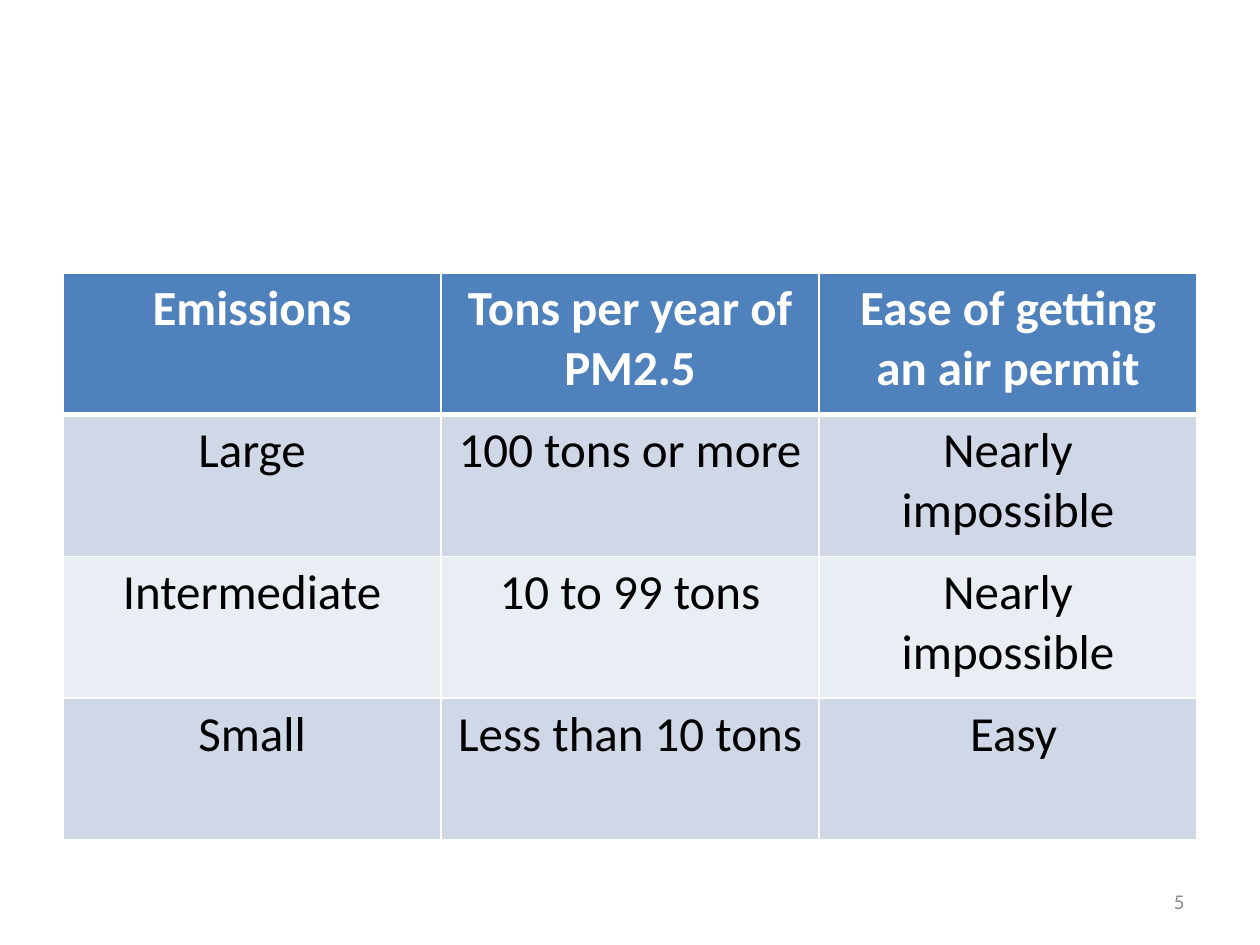
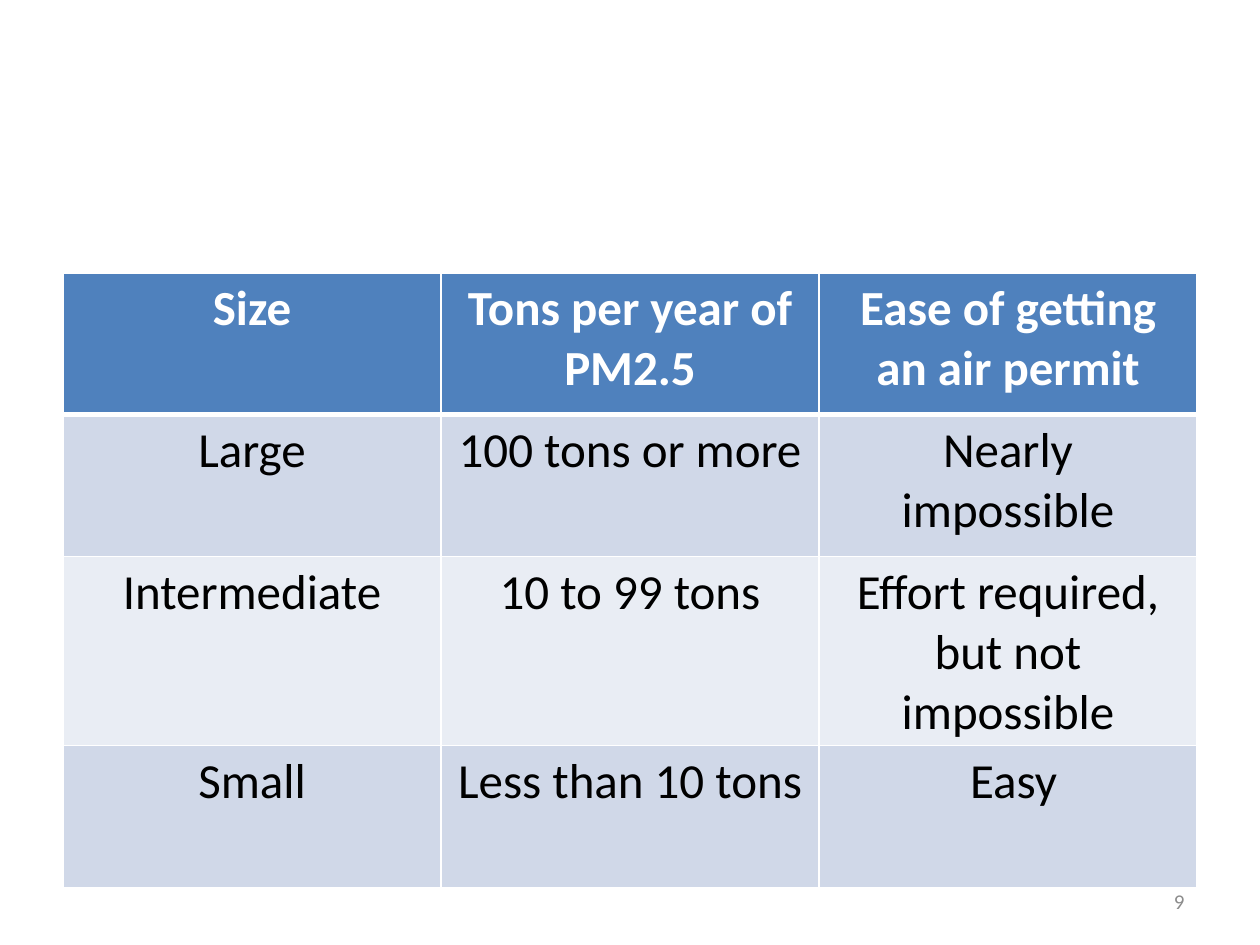
from lxml.etree import SubElement
from pptx import Presentation
from pptx.dml.color import RGBColor
from pptx.enum.text import MSO_ANCHOR, PP_ALIGN
from pptx.oxml.ns import qn
from pptx.util import Emu, Pt

EMU_PER_PX = 914400 / 126
FONT = "Calibri"
COLORS = {
    "header": "4F81BD",
    "band_dark": "D0D8E8",
    "band_light": "E9EDF4",
    "border": "FFFFFF",
    "header_text": "FFFFFF",
    "body_text": "000000",
    "page_number": "8C8C8C",
}
SLIDE_SIZE = (1260, 945)
TABLE_BOX = (63, 273, 1134, 567)
PAGE_NUMBER_BOX = (903, 876, 294, 50)

PERMIT_SLIDES = [
    {"page": 5, "first_heading": "Emissions", "intermediate_ease": "Nearly impossible"},
    {"page": 9, "first_heading": "Size", "intermediate_ease": "Effort required, but not impossible"},
]


def px(length):
    return Emu(round(length * EMU_PER_PX))


def write(paragraph, text, size, color, align, bold=False):
    paragraph.alignment = align
    run = paragraph.add_run()
    run.text = text
    run.font.name = FONT
    run.font.size = Pt(size)
    run.font.bold = bold
    run.font.color.rgb = RGBColor.from_string(COLORS[color])


def set_borders(cell, top, bottom):
    """Draw the four cell borders; widths are in points."""
    properties = cell._tc.get_or_add_tcPr()
    for tag, width in (("a:lnL", 1), ("a:lnR", 1), ("a:lnT", top), ("a:lnB", bottom)):
        line = SubElement(properties, qn(tag), w=str(Pt(width)))
        fill = SubElement(line, qn("a:solidFill"))
        SubElement(fill, qn("a:srgbClr"), val=COLORS["border"])


def add_permit_table(slide, box, rows):
    left, top, width, height = map(px, box)
    column_count = len(rows[0])
    table = slide.shapes.add_table(len(rows), column_count, left, top, width, height).table
    for column in table.columns:
        column.width = width // column_count
    for row_index, texts in enumerate(rows):
        table.rows[row_index].height = height // len(rows)
        is_header = row_index == 0
        band = "header" if is_header else "band_dark" if row_index % 2 else "band_light"
        for column_index, text in enumerate(texts):
            cell = table.cell(row_index, column_index)
            # A thick rule separates the header from the body
            set_borders(cell, top=3 if row_index == 1 else 1, bottom=3 if is_header else 1)
            cell.fill.solid()
            cell.fill.fore_color.rgb = RGBColor.from_string(COLORS[band])
            write(cell.text_frame.paragraphs[0], text, 28,
                  "header_text" if is_header else "body_text", PP_ALIGN.CENTER, is_header)


def add_page_number(slide, box, number):
    frame = slide.shapes.add_textbox(*map(px, box)).text_frame
    frame.word_wrap = True
    frame.vertical_anchor = MSO_ANCHOR.MIDDLE
    write(frame.paragraphs[0], str(number), 12, "page_number", PP_ALIGN.RIGHT)


def add_permit_slide(presentation, page, first_heading, intermediate_ease):
    slide = presentation.slides.add_slide(presentation.slide_layouts[6])
    add_permit_table(slide, TABLE_BOX, [
        (first_heading, "Tons per year of PM2.5", "Ease of getting an air permit"),
        ("Large", "100 tons or more", "Nearly impossible"),
        ("Intermediate", "10 to 99 tons", intermediate_ease),
        ("Small", "Less than 10 tons", " Easy"),
    ])
    add_page_number(slide, PAGE_NUMBER_BOX, page)


def main():
    presentation = Presentation()
    presentation.slide_width, presentation.slide_height = map(px, SLIDE_SIZE)
    for content in PERMIT_SLIDES:
        add_permit_slide(presentation, **content)
    presentation.save("out.pptx")


if __name__ == "__main__":
    main()
